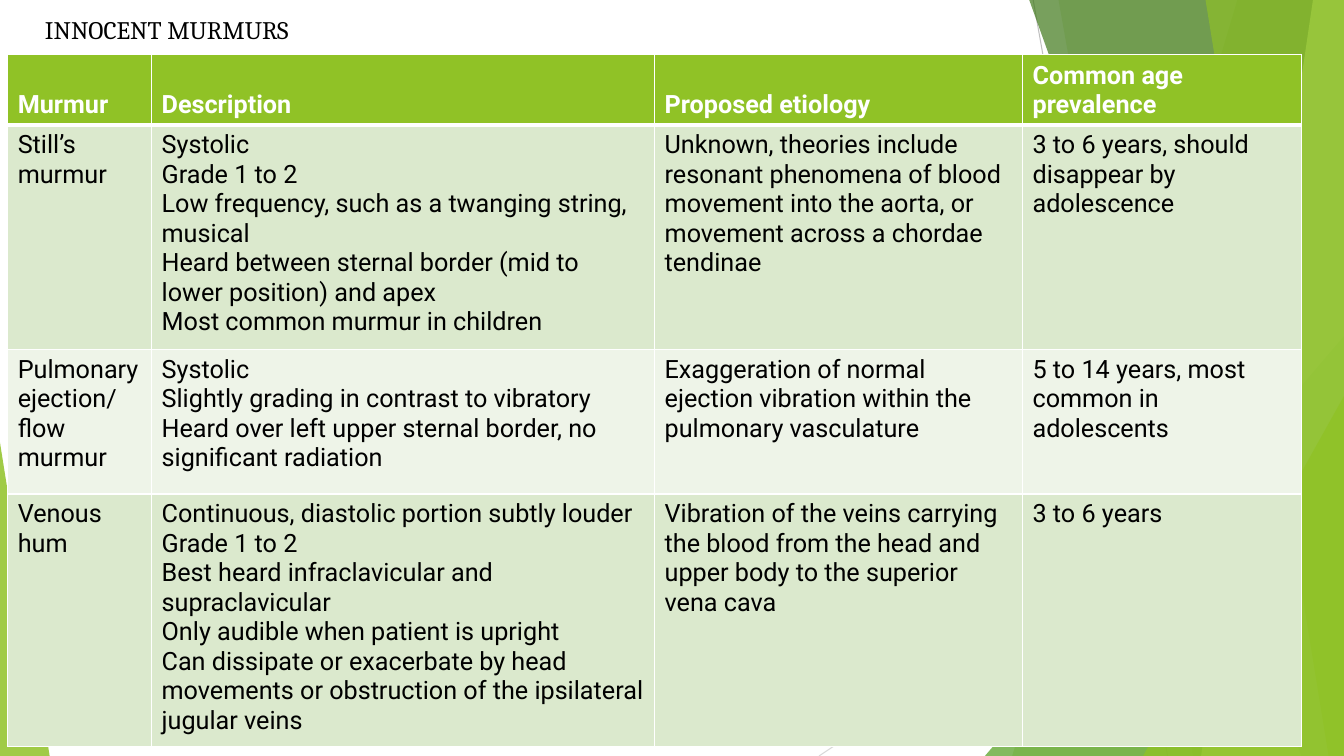
from lxml import etree
from pptx import Presentation
from pptx import util as u
from pptx.dml.color import RGBColor
from pptx.enum import shapes, text
from pptx.oxml.ns import qn

WIDTH, HEIGHT = 960, 540
COLORS = {
    "white": "FFFFFF", "black": "000000", "lime": "90C226",
    "green": "54A021", "forest": "3F7819", "pale": "C0E474",
    "gray": "BFBFBF", "silver": "D9D9D9",
    "band": "DBE9CD", "light": "EEF4E8",
}

HEADINGS = ["Murmur", "Description", "Proposed etiology", "Common age prevalence"]
MURMURS = [
    ["Still’s murmur",
     "Systolic\nGrade 1 to 2\nLow frequency, such as a twanging string, musical\n"
     "Heard between sternal border (mid to lower position) and apex\n"
     "Most common murmur in children",
     "Unknown, theories include resonant phenomena of blood movement into the aorta, "
     "or movement across a chordae tendinae",
     "3 to 6 years, should disappear by adolescence"],
    ["Pulmonary ejection/\nflow murmur",
     "Systolic\nSlightly grading in contrast to vibratory\n"
     "Heard over left upper sternal border, no significant radiation",
     "Exaggeration of normal ejection vibration within the pulmonary vasculature",
     "5 to 14 years, most common in adolescents"],
    ["Venous hum",
     "Continuous, diastolic portion subtly louder\nGrade 1 to 2\n"
     "Best heard infraclavicular and supraclavicular\n"
     "Only audible when patient is upright\n"
     "Can dissipate or exacerbate by head movements or obstruction of the "
     "ipsilateral jugular veins",
     "Vibration of the veins carrying the blood from the head and upper body "
     "to the superior vena cava",
     "3 to 6 years"],
]


class SlideBuilder:
    size = 18
    title_font = "Cambria"
    body_font = "Roboto"

    def __init__(self, page):
        self.page = page

    def color(self, name):
        return RGBColor.from_string(COLORS[name])

    def paint(self, shape, color, opacity):
        shape.shadow.inherit = False
        shape.line.fill.background()
        shape.fill.solid()
        shape.fill.fore_color.rgb = self.color(color)
        tint = shape._element.spPr.find(qn("a:solidFill"))[0]
        etree.SubElement(tint, qn("a:alpha"), val=str(opacity * 1000))

    def line(self, start, end, color):
        connector = self.page.shapes.add_connector(
            shapes.MSO_CONNECTOR.STRAIGHT, *map(u.Pt, start + end))
        connector.line.color.rgb = self.color(color)
        connector.line.width = u.Pt(0.75)
        etree.SubElement(connector._element.spPr, qn("a:effectLst"))

    def ribbon(self, top_x, bottom_x, color, opacity):
        top = -0.6
        outline = self.page.shapes.build_freeform(u.Pt(top_x), u.Pt(top))
        corners = [(WIDTH, top), (WIDTH, HEIGHT), (bottom_x, HEIGHT)]
        outline.add_line_segments([(u.Pt(x), u.Pt(y)) for x, y in corners])
        self.paint(outline.convert_to_shape(), color, opacity)

    def triangle(self, left, top, width, tip, color, opacity):
        shape = self.page.shapes.add_shape(
            shapes.MSO_SHAPE.ISOSCELES_TRIANGLE,
            *map(u.Pt, (left, top, width, HEIGHT - top)))
        shape.adjustments[0] = tip
        self.paint(shape, color, opacity)

    def add_text(self, frame, content, font, color, bold=False):
        frame.word_wrap = True
        for index, words in enumerate(content.split("\n")):
            para = frame.add_paragraph() if index else frame.paragraphs[0]
            span = para.add_run()
            span.text = words
            span.font.name = font
            span.font.size = u.Pt(self.size)
            span.font.bold = bold
            span.font.color.rgb = self.color(color)

    def title(self, content, left, top, width, height):
        box = self.page.shapes.add_textbox(*map(u.Pt, (left, top, width, height)))
        self.add_text(box.text_frame, content, self.title_font, "black")

    def borders(self, cell, widths):
        properties = cell._tc.get_or_add_tcPr()
        for index, (side, width) in enumerate(zip("LRTB", widths)):
            edge = etree.Element(qn(f"a:ln{side}"), w=str(u.Pt(width)))
            fill = etree.SubElement(edge, qn("a:solidFill"))
            etree.SubElement(fill, qn("a:srgbClr"), val=COLORS["white"])
            properties.insert(index, edge)

    def table(self, rows, left, top, widths, heights):
        frame = self.page.shapes.add_table(
            len(heights), len(widths),
            *map(u.Pt, (left, top, sum(widths), sum(heights))))
        table = frame.table
        for column, width in zip(table.columns, widths):
            column.width = u.Pt(width)
        for row, height in zip(table.rows, heights):
            row.height = u.Pt(height)
        for r, row in enumerate(rows):
            header = r == 0
            fill = "lime" if header else ("light", "band")[r % 2]
            for c, content in enumerate(row):
                cell = table.cell(r, c)
                cell.fill.solid()
                cell.fill.fore_color.rgb = self.color(fill)
                self.borders(cell, (1, 1, 3 if r == 1 else 1, 3 if header else 1))
                cell.vertical_anchor = (
                    text.MSO_ANCHOR.BOTTOM if header else text.MSO_ANCHOR.TOP)
                self.add_text(cell.text_frame, content, self.body_font,
                              "white" if header else "black", header)


def main():
    deck = Presentation()
    deck.slide_width, deck.slide_height = u.Pt(WIDTH), u.Pt(HEIGHT)
    slide = SlideBuilder(deck.slides.add_slide(deck.slide_layouts[6]))

    slide.line((738, 0), (834, HEIGHT), "gray")
    slide.line((WIDTH, 290), (585, HEIGHT), "silver")
    slide.ribbon(884, 723, "lime", 30)
    slide.ribbon(756, 852, "lime", 20)
    slide.triangle(703.5, 240, 256.5, 1, "green", 72)
    slide.ribbon(735, 929.5, "forest", 70)
    slide.ribbon(938, 858, "pale", 70)
    slide.ribbon(861, 949, "lime", 65)
    slide.triangle(816.5, 283, 143.5, 1, "lime", 80)
    slide.triangle(0, 316, 35.5, 0, "lime", 85)

    slide.title("INNOCENT MURMURS", 25, 7, 705, 39)
    slide.table([HEADINGS] + MURMURS, 5.5, 39,
                (102.8, 359.3, 262.8, 199.4), (49, 160.5, 103, 176))
    deck.save("out.pptx")


if __name__ == "__main__":
    main()
